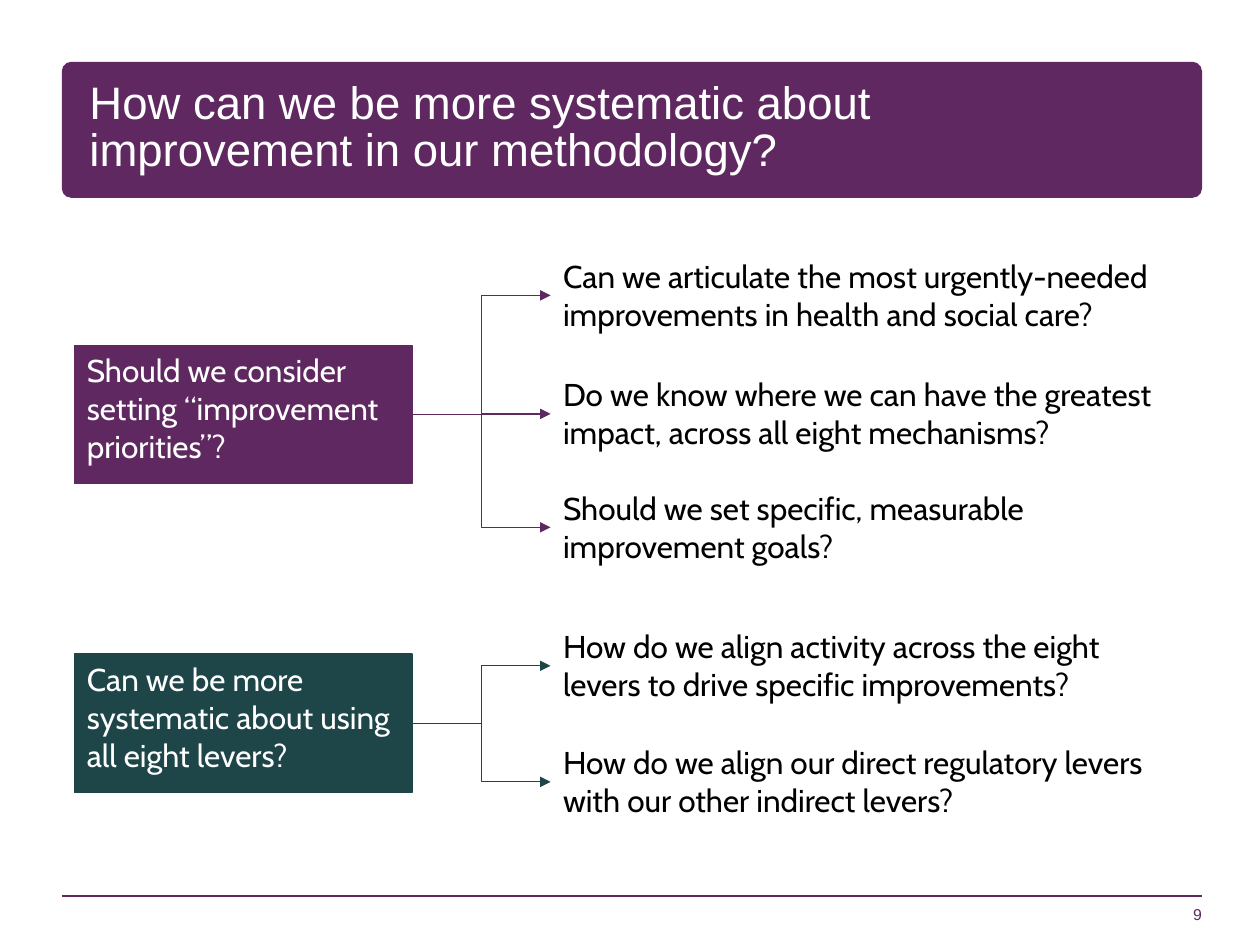
from dataclasses import dataclass

from lxml import etree
from pptx import Presentation
from pptx.dml.color import RGBColor
from pptx.enum.shapes import MSO_CONNECTOR, MSO_SHAPE
from pptx.enum.text import MSO_ANCHOR, MSO_AUTO_SIZE, PP_ALIGN
from pptx.oxml.ns import qn
from pptx.shapes.autoshape import Shape
from pptx.shapes.connector import Connector
from pptx.slide import Slide
from pptx.util import Inches, Pt

ELBOW, STRAIGHT = MSO_CONNECTOR.ELBOW, MSO_CONNECTOR.STRAIGHT
RECTANGLE, ROUNDED = MSO_SHAPE.RECTANGLE, MSO_SHAPE.ROUNDED_RECTANGLE
TOP, MIDDLE, BOTTOM = MSO_ANCHOR.TOP, MSO_ANCHOR.MIDDLE, MSO_ANCHOR.BOTTOM
LEFT, RIGHT = PP_ALIGN.LEFT, PP_ALIGN.RIGHT
LEFT_SITE, RIGHT_SITE = 1, 3


@dataclass(frozen=True)
class Theme:
    purple: str = "5F2861"
    teal: str = "1E4649"
    white: str = "FFFFFF"
    black: str = "000000"
    heading_font: str = "Arial"
    body_font: str = "Cabin"
    title_size: float = 26
    body_size: float = 18
    number_size: float = 9
    thin: float = 0.75
    rule: float = 1


@dataclass(frozen=True)
class Question:
    text: str
    top: float


@dataclass(frozen=True)
class Topic:
    text: str
    top: float
    color: str
    questions: tuple[Question, ...]


THEME = Theme()
MARGIN, CONTENT_WIDTH = 0.49, 9.05
RIGHT_EDGE = MARGIN + CONTENT_WIDTH
TOPIC_LEFT, TOPIC_WIDTH, TOPIC_HEIGHT = 0.59, 2.68, 1.1
QUESTION_LEFT, QUESTION_WIDTH, QUESTION_HEIGHT = 4.37, 5.11, 0.71

TOPICS = (
    Topic("Should we consider setting “improvement priorities”?", 2.74, THEME.purple, (
        Question("Can we articulate the most urgently-needed improvements "
                 "in health and social care?", 1.99),
        Question("Do we know where we can have the greatest impact, "
                 "across all eight mechanisms?", 2.93),
        Question("Should we set specific, measurable improvement goals?", 3.83),
    )),
    Topic("Can we be more systematic about using all eight levers?", 5.19, THEME.teal, (
        Question("How do we align activity across the eight levers "
                 "to drive specific improvements?", 4.93),
        Question("How do we align our direct regulatory levers "
                 "with our other indirect levers?", 5.85),
    )),
)


def write(box: Shape, text: str, *, font: str = THEME.body_font,
          size: float = THEME.body_size, color: str = THEME.black,
          align: PP_ALIGN = LEFT, anchor: MSO_ANCHOR = TOP,
          line_spacing: float = 1.0, inset: bool = True) -> None:
    frame = box.text_frame
    frame.word_wrap = True
    frame.auto_size = MSO_AUTO_SIZE.NONE
    frame.vertical_anchor = anchor
    if not inset:
        frame.margin_left = frame.margin_right = 0
        frame.margin_top = frame.margin_bottom = 0
    para = frame.paragraphs[0]
    para.alignment = align
    para.line_spacing = line_spacing
    span = para.add_run()
    span.text = text
    span.font.name = font
    span.font.size = Pt(size)
    span.font.color.rgb = RGBColor.from_string(color)


def add_panel(page: Slide, kind: MSO_SHAPE, left: float, top: float,
              width: float, height: float, color: str) -> Shape:
    panel = page.shapes.add_shape(
        kind, Inches(left), Inches(top), Inches(width), Inches(height))
    panel.shadow.inherit = False
    panel.fill.solid()
    panel.fill.fore_color.rgb = RGBColor.from_string(color)
    panel.line.fill.background()
    return panel


def add_text_box(page: Slide, left: float, top: float,
                 width: float, height: float) -> Shape:
    return page.shapes.add_textbox(
        Inches(left), Inches(top), Inches(width), Inches(height))


def style_line(line: Connector, color: str, width: float, arrow: bool = False) -> None:
    line.line.color.rgb = RGBColor.from_string(color)
    line.line.width = Pt(width)
    if arrow:
        etree.SubElement(line.line._get_or_add_ln(), qn("a:tailEnd"), type="triangle")
    etree.SubElement(line._element.spPr, qn("a:effectLst"))


def add_frame(page: Slide) -> None:
    """Draw the title band, the title, the footer rule and the page number."""
    band = add_panel(page, ROUNDED, MARGIN, 0.49, CONTENT_WIDTH, 1.08, THEME.purple)
    band.adjustments[0] = 0.07

    title = page.shapes.title
    title.left, title.top = Inches(0.71), Inches(0.53)
    title.width, title.height = Inches(6.75), Inches(0.99)
    write(title, "How can we be more systematic about improvement in our methodology?",
          font=THEME.heading_font, size=THEME.title_size, color=THEME.white,
          anchor=MIDDLE, line_spacing=0.85, inset=False)
    band._element.addnext(title._element)

    rule = page.shapes.add_connector(
        STRAIGHT, Inches(MARGIN), Inches(7.11), Inches(RIGHT_EDGE), Inches(7.11))
    style_line(rule, THEME.purple, THEME.rule)

    number = add_text_box(page, 7.46, 6.83, RIGHT_EDGE - 7.46, 0.5)
    write(number, "9", font=THEME.heading_font, size=THEME.number_size,
          color=THEME.purple, align=RIGHT, anchor=BOTTOM, inset=False)


def add_topic(page: Slide, topic: Topic) -> None:
    """Draw a topic box with an elbow arrow to each of its questions."""
    source = add_panel(page, RECTANGLE, TOPIC_LEFT, topic.top,
                       TOPIC_WIDTH, TOPIC_HEIGHT, topic.color)
    source.line.color.rgb = RGBColor.from_string(topic.color)
    source.line.width = Pt(THEME.thin)
    write(source, topic.text, color=THEME.white)
    for question in topic.questions:
        target = add_text_box(page, QUESTION_LEFT, question.top,
                              QUESTION_WIDTH, QUESTION_HEIGHT)
        write(target, question.text)
        arrow = page.shapes.add_connector(ELBOW, 0, 0, 0, 0)
        arrow.begin_connect(source, RIGHT_SITE)
        arrow.end_connect(target, LEFT_SITE)
        style_line(arrow, topic.color, THEME.thin, arrow=True)


def main() -> None:
    deck = Presentation()
    deck.slide_width, deck.slide_height = Inches(10), Inches(7.5)
    page = deck.slides.add_slide(deck.slide_layouts[5])
    add_frame(page)
    for topic in TOPICS:
        add_topic(page, topic)
    deck.save("out.pptx")


if __name__ == "__main__":
    main()
